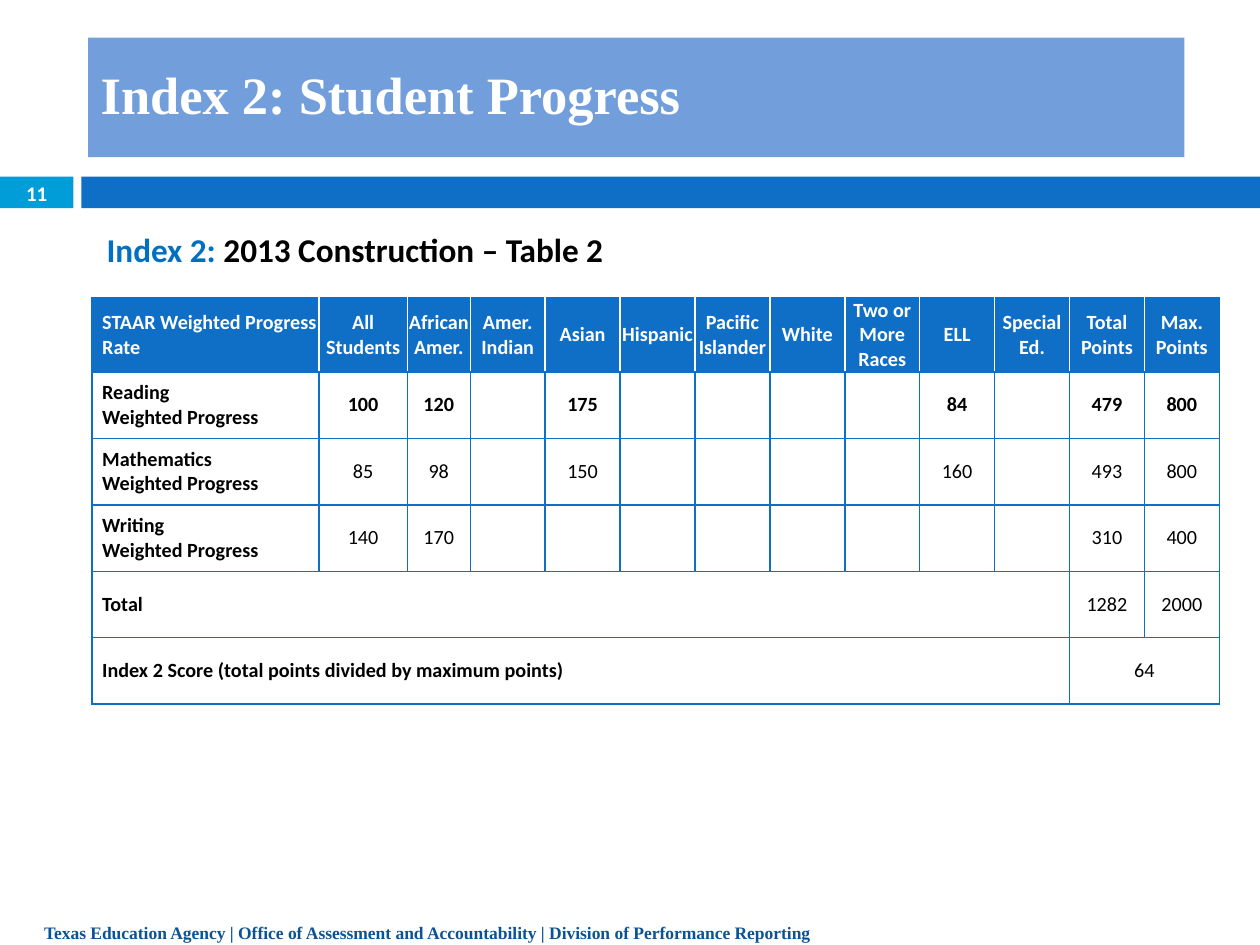
from dataclasses import dataclass

import pptx
import pptx.dml.color
import pptx.enum.shapes
import pptx.enum.text
import pptx.oxml.ns
import pptx.util
from lxml import etree

Cm = pptx.util.Cm
Pt = pptx.util.Pt
RGBColor = pptx.dml.color.RGBColor
Align = pptx.enum.text.PP_ALIGN
Anchor = pptx.enum.text.MSO_ANCHOR

WHITE = RGBColor(0xFF, 0xFF, 0xFF)
BLACK = RGBColor(0x00, 0x00, 0x00)
BLUE = RGBColor(0x0F, 0x6F, 0xC6)
CYAN = RGBColor(0x00, 0x9D, 0xD9)
TITLE_BLUE = RGBColor(0x72, 0x9F, 0xDC)
HEADING_BLUE = RGBColor(0x00, 0x70, 0xC0)
FOOTER_BLUE = RGBColor(0x0B, 0x53, 0x95)
SANS = "Calibri"
SERIF = "Times New Roman"


@dataclass(frozen=True)
class Box:
    left: float
    top: float
    width: float
    height: float

    def lengths(self) -> list:
        return [Cm(n) for n in (self.left, self.top, self.width, self.height)]


@dataclass(frozen=True)
class Style:
    size: float
    color: RGBColor
    font: str = SANS
    bold: bool = True


@dataclass(frozen=True)
class Measure:
    label: str
    points: dict
    bold: bool = False


HEADERS = ["STAAR Weighted Progress Rate", "All Students", "African Amer.",
           "Amer. Indian", "Asian", "Hispanic", "Pacific Islander", "White",
           "Two or More Races", "ELL", "Special Ed.", "Total Points", "Max.\nPoints"]
MEASURES = [
    Measure("Reading\nWeighted Progress",
            {1: "100", 2: "120", 4: "175", 9: "84", 11: "479", 12: "800"}, True),
    Measure("Mathematics\nWeighted Progress",
            {1: "85", 2: "98", 4: "150", 9: "160", 11: "493", 12: "800"}),
    Measure("Writing\nWeighted Progress",
            {1: "140", 2: "170", 11: "310", 12: "400"}),
    Measure("Total", {11: "1282", 12: "2000"}),
    Measure("Index 2 Score (total points divided by maximum points)", {11: "64"}),
]
COLUMN_WIDTHS = [4.58, 1.78, 1.27] + [1.51] * 10
ROW_HEIGHTS = [1.48] + [1.34] * len(MEASURES)
LAST_COLUMN = len(HEADERS) - 1
TOTAL_ROW, SCORE_ROW = 4, 5
TOTAL_COLUMN = 11


def add_run(paragraph, text: str, style: Style) -> None:
    run = paragraph.add_run()
    run.text = text
    run.font.size = Pt(style.size)
    run.font.name = style.font
    run.font.bold = style.bold
    run.font.color.rgb = style.color


def add_bar(slide, box: Box, color: RGBColor):
    bar = slide.shapes.add_shape(
        pptx.enum.shapes.MSO_SHAPE.RECTANGLE, *box.lengths())
    bar.shadow.inherit = False
    bar.fill.solid()
    bar.fill.fore_color.rgb = color
    bar.line.fill.background()
    return bar


def write_line(shape, runs: list, align=Align.LEFT, anchor=Anchor.TOP,
               spacing: float = 0) -> None:
    frame = shape.text_frame
    frame.word_wrap = True
    frame.vertical_anchor = anchor
    paragraph = frame.paragraphs[0]
    paragraph.alignment = align
    if spacing:
        paragraph.line_spacing = Pt(spacing)
    for text, style in runs:
        add_run(paragraph, text, style)


def set_borders(cell, sides: dict) -> None:
    properties = cell._tc.get_or_add_tcPr()
    qn = pptx.oxml.ns.qn
    for side in ("L", "R", "T", "B"):
        line = etree.SubElement(properties, qn(f"a:ln{side}"), w=str(Pt(1)))
        fill = etree.SubElement(line, qn("a:solidFill"))
        etree.SubElement(fill, qn("a:srgbClr"), val=str(sides.get(side, BLUE)))


def fill_cell(cell, text: str, style: Style, centred: bool) -> None:
    cell.vertical_anchor = Anchor.MIDDLE
    cell.margin_top = cell.margin_bottom = cell.margin_right = Cm(0)
    cell.margin_left = Cm(0 if centred else 0.21)
    if not text:
        return
    for index, line in enumerate(text.split("\n")):
        frame = cell.text_frame
        paragraph = frame.add_paragraph() if index else frame.paragraphs[0]
        paragraph.alignment = Align.CENTER if centred else Align.LEFT
        add_run(paragraph, line, style)


def add_progress_table(slide, left: float, top: float) -> None:
    box = Box(left, top, sum(COLUMN_WIDTHS), sum(ROW_HEIGHTS))
    table = slide.shapes.add_table(
        len(ROW_HEIGHTS), len(HEADERS), *box.lengths()).table
    table.horz_banding = False
    for column, width in zip(table.columns, COLUMN_WIDTHS):
        column.width = Cm(width)
    for row, height in zip(table.rows, ROW_HEIGHTS):
        row.height = Cm(height)

    for index, header in enumerate(HEADERS):
        cell = table.cell(0, index)
        set_borders(cell, {"L": WHITE if index else BLUE,
                           "R": WHITE if index < LAST_COLUMN else BLUE})
        cell.fill.solid()
        cell.fill.fore_color.rgb = BLUE
        fill_cell(cell, header, Style(11.5, WHITE), index > 0)

    for row, measure in enumerate(MEASURES, 1):
        for index in range(len(HEADERS)):
            cell = table.cell(row, index)
            set_borders(cell, {})
            cell.fill.background()
            text = measure.points.get(index, "") if index else measure.label
            bold = measure.bold or index == 0
            fill_cell(cell, text, Style(11.5, BLACK, bold=bold), index > 0)

    for row in (TOTAL_ROW, SCORE_ROW):
        table.cell(row, 0).merge(table.cell(row, TOTAL_COLUMN - 1))
    table.cell(SCORE_ROW, TOTAL_COLUMN).merge(table.cell(SCORE_ROW, LAST_COLUMN))


def main() -> None:
    deck = pptx.Presentation()
    deck.slide_width, deck.slide_height = Cm(25.4), Cm(19.05)
    slide = deck.slides.add_slide(deck.slide_layouts[6])

    add_bar(slide, Box(0, 3.56, 1.48, 0.64), CYAN)
    add_bar(slide, Box(1.64, 3.56, 23.76, 0.64), BLUE)
    add_progress_table(slide, 1.85, 6.01)

    page_number = slide.shapes.add_textbox(*Box(0, 3.54, 1.48, 0.69).lengths())
    write_line(page_number, [("11", Style(11.9, WHITE))],
               Align.CENTER, Anchor.MIDDLE)

    heading = slide.shapes.add_textbox(*Box(1.9, 4.45, 22.76, 1.02).lengths())
    write_line(heading, [("Index 2:", Style(19, HEADING_BLUE)),
                         (" 2013 Construction – Table 2", Style(19, BLACK))],
               spacing=24)

    title = add_bar(slide, Box(1.78, 0.76, 22.1, 2.41), TITLE_BLUE)
    write_line(title, [("Index 2: Student Progress", Style(30, WHITE, SERIF))],
               anchor=Anchor.MIDDLE, spacing=32)

    footer = slide.shapes.add_textbox(*Box(0.64, 17.96, 22.86, 1.04).lengths())
    write_line(footer, [("Texas Education Agency | Office of Assessment and "
                         "Accountability | Division of Performance Reporting",
                         Style(10, FOOTER_BLUE, SERIF))], spacing=26)

    deck.save("out.pptx")


if __name__ == "__main__":
    main()
